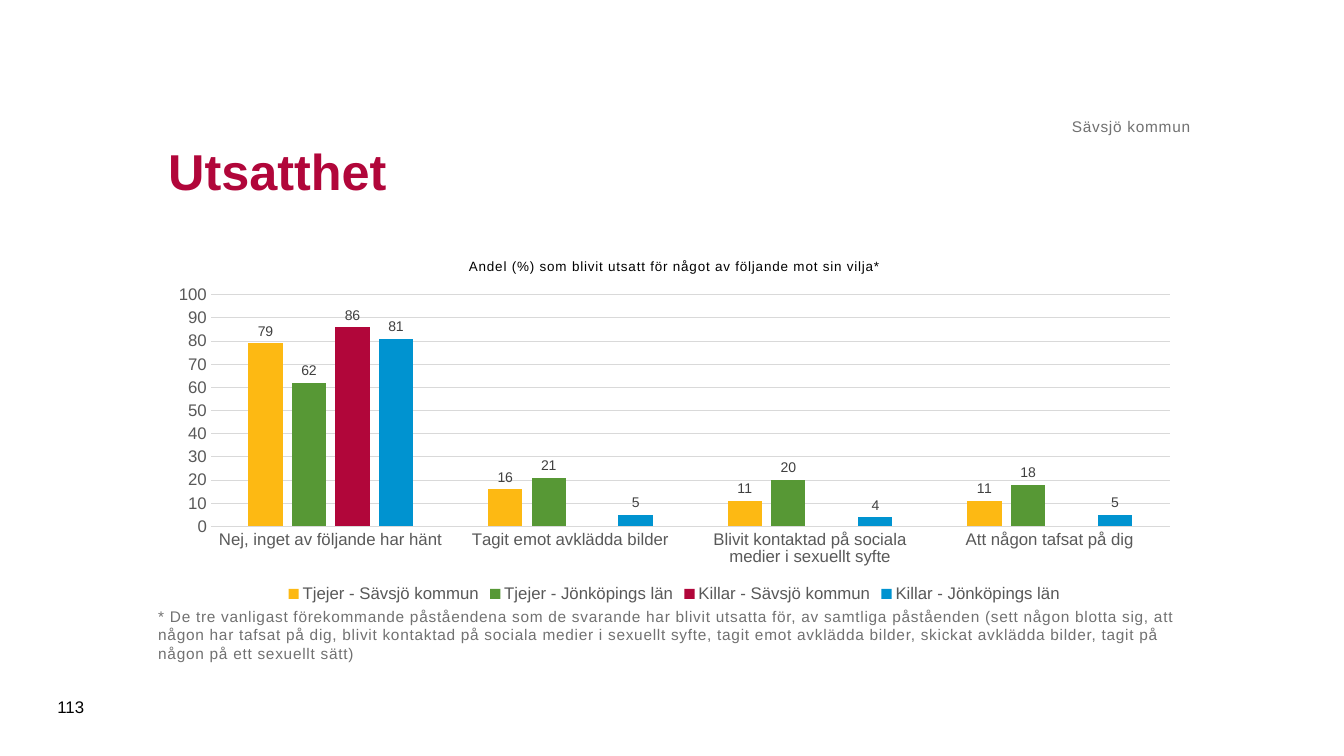
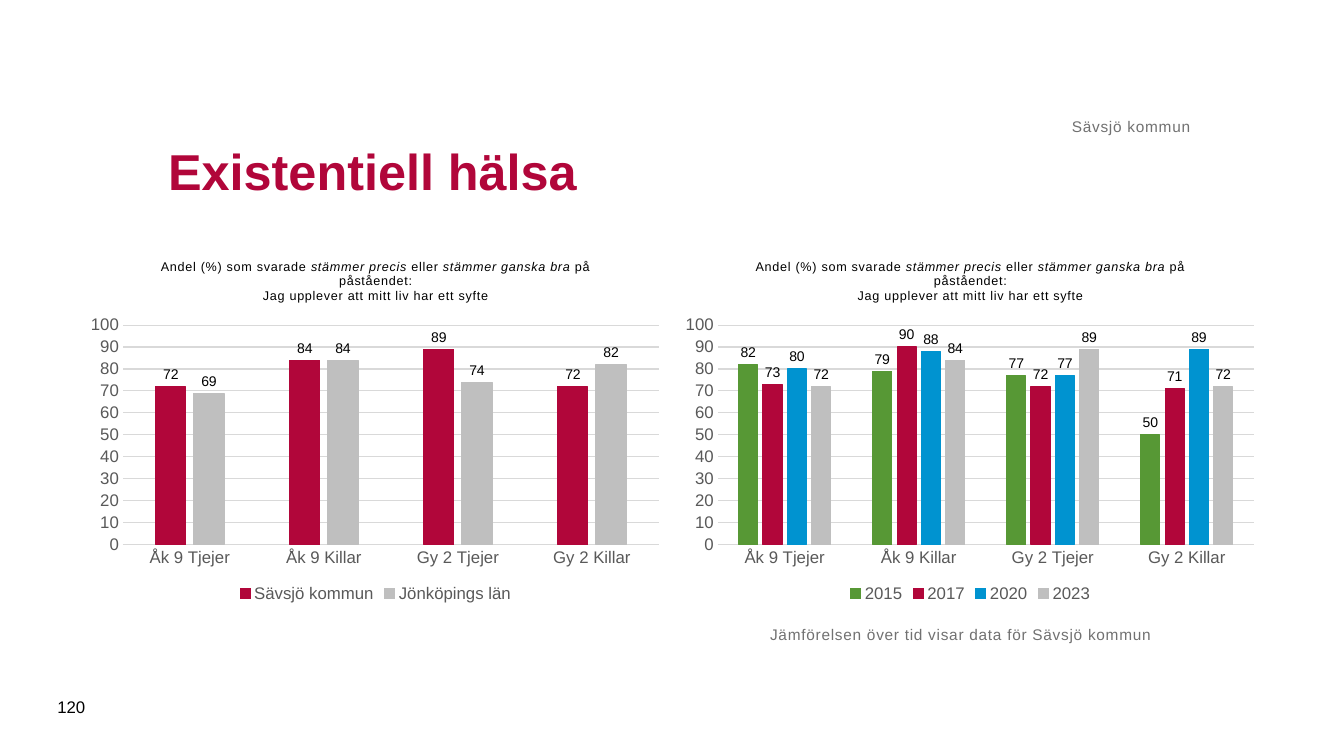
"""Build two survey slides with clustered column charts."""
from lxml import etree
from pptx import Presentation
from pptx.chart.data import CategoryChartData
from pptx.dml.color import RGBColor
from pptx.enum.chart import XL_CHART_TYPE, XL_LABEL_POSITION, XL_LEGEND_POSITION, XL_TICK_MARK
from pptx.enum.text import MSO_ANCHOR, PP_ALIGN
from pptx.oxml.ns import qn
from pptx.util import Inches, Pt

COLUMNS = XL_CHART_TYPE.COLUMN_CLUSTERED
OUTSIDE = XL_LABEL_POSITION.OUTSIDE_END
BOTTOM_LEGEND = XL_LEGEND_POSITION.BOTTOM
NO_TICK = XL_TICK_MARK.NONE
TOP, MIDDLE, BOTTOM = MSO_ANCHOR.TOP, MSO_ANCHOR.MIDDLE, MSO_ANCHOR.BOTTOM
LEFT, RIGHT = PP_ALIGN.LEFT, PP_ALIGN.RIGHT

FONT = "Arial"
RED, GREEN, BLUE, YELLOW, SILVER = "B1063A", "579835", "0093D0", "FDB913", "BFBFBF"
BLACK, DARK, AXIS, NOTE, GRID = "000000", "404040", "595959", "717171", "D9D9D9"
NUMBER = "#,##0;#,##0"
MARGIN, CONTENT = 11.77, 76.8
CHART_TOP, CHART_HEIGHT = 32, 48.27
HALF_LEFT, HALF_RIGHT, HALF = 5.93, 50.19, 44.03

prs = Presentation()
prs.slide_width, prs.slide_height = Inches(13.33), Inches(7.5)


def box(x, y, w, h):
    """Turn percentages of the slide into lengths."""
    sides = (prs.slide_width, prs.slide_height) * 2
    return [int(side * share / 100) for side, share in zip(sides, (x, y, w, h))]


def style(font, size, color, bold=False):
    """Give a font its face, size and colour."""
    font.name, font.size, font.bold = FONT, Pt(size), bold
    font.color.rgb = RGBColor.from_string(color)


groups = ["Åk 9 Tjejer", "Åk 9 Killar", "Gy 2 Tjejer", "Gy 2 Killar"]
purpose_title = [
    [("Andel (%) som svarade ", False), ("stämmer precis", True), (" eller ", False),
     ("stämmer ganska bra", True), (" på påståendet:", False)],
    [("Jag upplever att mitt liv har ett syfte", False)],
]
wide_plot = (0.051, 0.145, 0.929, 0.635)
half_plot = (0.073, 0.228, 0.906, 0.602)

slides = [
    {
        "title": "Utsatthet",
        "number": "113",
        "note": "* De tre vanligast förekommande påståendena som de svarande har blivit utsatta för, "
                "av samtliga påståenden (sett någon blotta sig, att någon har tafsat på dig, "
                "blivit kontaktad på sociala medier i sexuellt syfte, tagit emot avklädda bilder, "
                "skickat avklädda bilder, tagit på någon på ett sexuellt sätt)",
        "note_box": (MARGIN, 80.27, CONTENT, 12.53),
        "title_size": 9.6,
        "label_color": DARK,
        "outlined": False,
        "plot": wide_plot,
        "chart_title": [[("Andel (%) som blivit utsatt för något av följande mot sin vilja*", False)]],
        "categories": ["Nej, inget av följande har hänt", "Tagit emot avklädda bilder",
                       "Blivit kontaktad på sociala medier i sexuellt syfte",
                       "Att någon tafsat på dig"],
        "charts": [
            (MARGIN, CONTENT, [
                ("Tjejer - Sävsjö kommun", YELLOW, (79, 16, 11, 11)),
                ("Tjejer - Jönköpings län", GREEN, (62, 21, 20, 18)),
                ("Killar - Sävsjö kommun", RED, (86, None, None, None)),
                ("Killar - Jönköpings län", BLUE, (81, 5, 4, 5)),
            ]),
        ],
    },
    {
        "title": "Existentiell hälsa",
        "number": "120",
        "note": "Jämförelsen över tid visar data för Sävsjö kommun",
        "note_box": (57.3, 82.67, 39.83, 12.53),
        "title_size": 9,
        "label_color": BLACK,
        "outlined": True,
        "plot": half_plot,
        "chart_title": purpose_title,
        "categories": groups,
        "charts": [
            (HALF_LEFT, HALF, [
                ("Sävsjö kommun", RED, (72, 84, 89, 72)),
                ("Jönköpings län", SILVER, (69, 84, 74, 82)),
            ]),
            (HALF_RIGHT, HALF, [
                ("2015", GREEN, (82, 79, 77, 50)),
                ("2017", RED, (73, 90, 72, 71)),
                ("2020", BLUE, (80, 88, 77, 89)),
                ("2023", SILVER, (72, 84, 89, 72)),
            ]),
        ],
    },
]

for content in slides:
    s = prs.slides.add_slide(prs.slide_layouts[6])

    for left, width, series_rows in content["charts"]:
        data = CategoryChartData(number_format="0")
        data.categories = content["categories"]
        for name, color, values in series_rows:
            data.add_series(name, values)
        chart = s.shapes.add_chart(COLUMNS, *box(left, CHART_TOP, width, CHART_HEIGHT), data).chart
        style(chart.font, 10, BLACK)

        chart.has_title = True
        tf = chart.chart_title.text_frame
        for i, runs in enumerate(content["chart_title"]):
            p = tf.add_paragraph() if i else tf.paragraphs[0]
            for text, italic in runs:
                r = p.add_run()
                r.text = text
                style(r.font, content["title_size"], BLACK)
                r.font.italic = italic
                r.font._element.set("spc", "50")
        chart.chart_title.include_in_layout = False

        chart.has_legend = True
        chart.legend.position = BOTTOM_LEGEND
        chart.legend.include_in_layout = False
        style(chart.legend.font, 12, AXIS)

        for axis in (chart.category_axis, chart.value_axis):
            axis.major_tick_mark = axis.minor_tick_mark = NO_TICK
            style(axis.tick_labels.font, 12, AXIS)
        value_axis = chart.value_axis
        value_axis.minimum_scale, value_axis.maximum_scale, value_axis.major_unit = 0, 100, 10
        value_axis.tick_labels.number_format = NUMBER
        value_axis.tick_labels.number_format_is_linked = False
        value_axis.format.line.fill.background()
        value_axis.has_major_gridlines = True
        for line in (chart.category_axis.format.line, value_axis.major_gridlines.format.line):
            line.width = Pt(0.75)
            line.color.rgb = RGBColor.from_string(GRID)

        plot = chart.plots[0]
        plot.gap_width, plot.overlap, plot.vary_by_categories = 219, -27, False
        for series, (name, color, values) in zip(plot.series, series_rows):
            series.format.fill.solid()
            series.format.fill.fore_color.rgb = RGBColor.from_string(color)
            if content["outlined"]:
                series.format.line.width = Pt(0.75)
                series.format.line.color.rgb = RGBColor.from_string(color)
            labels = series.data_labels
            labels.show_value = True
            labels.position = OUTSIDE
            labels.number_format = NUMBER
            labels.number_format_is_linked = False
            style(labels.font, 10, content["label_color"])

        area = chart._chartSpace.find(".//" + qn("c:plotArea"))
        for old in area.findall(qn("c:layout")):
            area.remove(old)
        layout = etree.Element(qn("c:layout"))
        area.insert(0, layout)
        manual = etree.SubElement(layout, qn("c:manualLayout"))
        settings = [("layoutTarget", "inner"), ("xMode", "edge"), ("yMode", "edge")]
        for tag, value in settings + list(zip("xywh", content["plot"])):
            etree.SubElement(manual, qn("c:" + tag)).set("val", str(value))

    texts = [
        (content["title"], (MARGIN, 13.07, CONTENT, 18.93), 36, RED, MIDDLE, LEFT),
        (content["note"], content["note_box"], 11, NOTE, TOP, LEFT),
        ("Sävsjö kommun", (MARGIN, 8.27, CONTENT, 9.73), 11, NOTE, BOTTOM, RIGHT),
        (content["number"], (3.53, 90.8, 4.28, 5.33), 12, BLACK, MIDDLE, LEFT),
    ]
    for text, area, size, color, anchor, align in texts:
        tf = s.shapes.add_textbox(*box(*area)).text_frame
        tf.word_wrap, tf.vertical_anchor = True, anchor
        p = tf.paragraphs[0]
        p.alignment = align
        r = p.add_run()
        r.text = text
        style(r.font, size, color, bold=color == RED)
        if color == NOTE:
            tf.margin_left = tf.margin_top = tf.margin_right = tf.margin_bottom = 0
            r.font._element.set("spc", "50")

prs.save("out.pptx")
